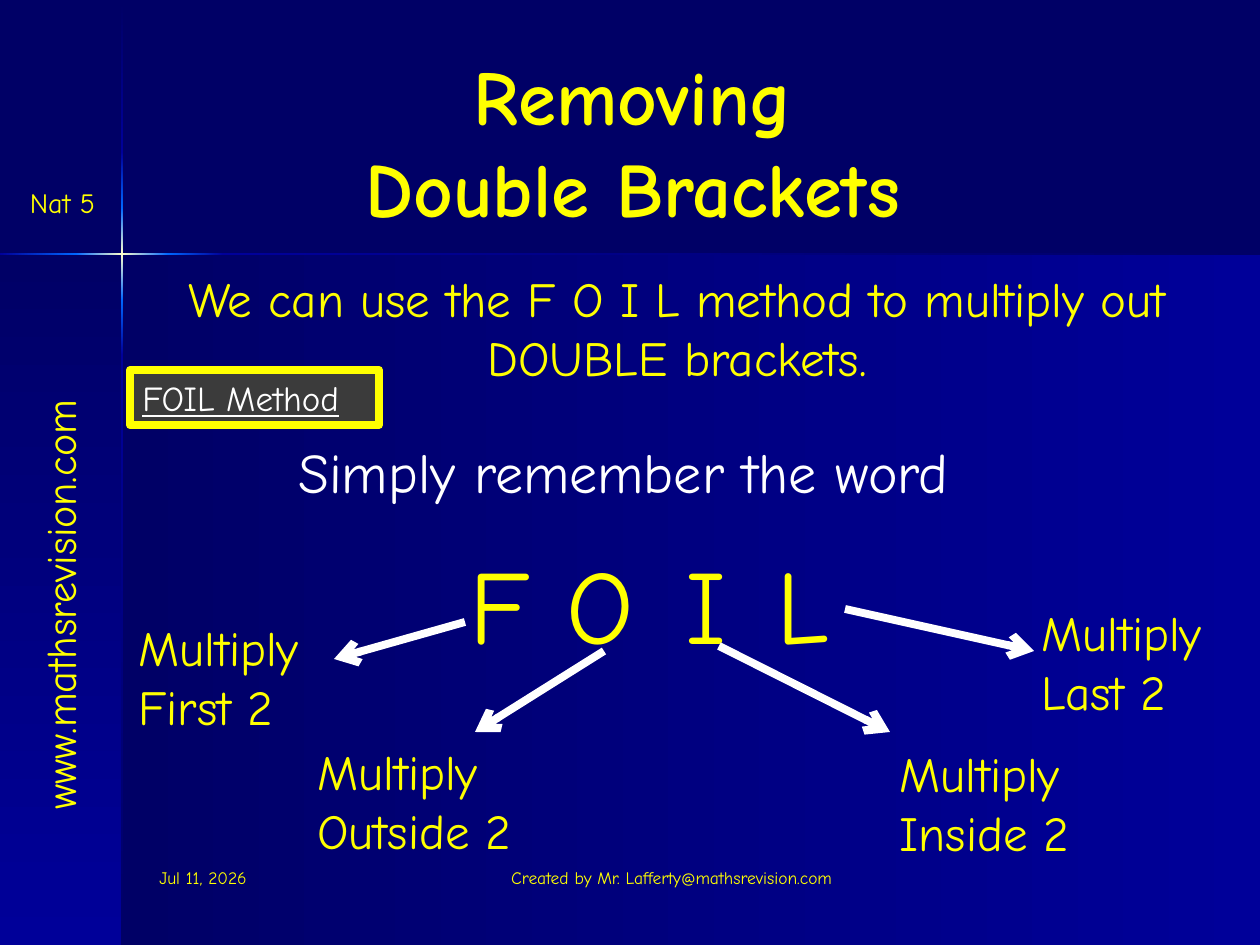
from lxml.etree import SubElement
from pptx import Presentation
from pptx.dml.color import RGBColor
from pptx.enum.shapes import MSO_CONNECTOR, MSO_SHAPE
from pptx.enum.text import MSO_ANCHOR, MSO_AUTO_SIZE, PP_ALIGN
from pptx.oxml.ns import qn
from pptx.util import Inches, Pt

SCALE = Inches(1) / 126
W, H = 1260, 945
FONT = "Comic Neue"
COLORS = {
    "navy": "000066", "blue": "000099", "glow": "0066FF", "cream": "FFFFCC",
    "yellow": "FFFF00", "white": "FFFFFF", "gray": "3B3B3B",
}


def px(n):
    return round(n * SCALE)


def rgb(name):
    return RGBColor.from_string(COLORS[name])


def write(sp, lines, size, color="yellow", align=PP_ALIGN.LEFT, wrap=False,
          grow=True, bold=None, underline=None):
    tf = sp.text_frame
    tf.word_wrap = wrap
    tf.auto_size = MSO_AUTO_SIZE.SHAPE_TO_FIT_TEXT if grow else MSO_AUTO_SIZE.NONE
    for i, line in enumerate(lines):
        p = tf.add_paragraph() if i else tf.paragraphs[0]
        p.alignment = align
        r = p.add_run()
        r.text = line
        r.font.name, r.font.size = FONT, Pt(size)
        r.font.bold, r.font.underline = bold, underline
        r.font.color.rgb = rgb(color)


def add_text(s, box, lines, size, **style):
    sp = s.shapes.add_textbox(*map(px, box))
    write(sp, lines, size, **style)
    return sp


def add_gradient(s, box, names, vertical):
    sp = s.shapes.add_shape(MSO_SHAPE.RECTANGLE, *map(px, box))
    sp.shadow.inherit = False
    sp.line.fill.background()
    sp.fill.gradient()
    sp.fill.gradient_angle = 270 if vertical else 0
    stops = sp._element.spPr.find(".//" + qn("a:gsLst"))
    for old in list(stops):
        stops.remove(old)
    for i, name in enumerate(names):
        gs = SubElement(stops, qn("a:gs"), pos=str(100000 * i // (len(names) - 1)))
        SubElement(gs, qn("a:srgbClr"), val=COLORS[name])


def add_arrow(s, x1, y1, x2, y2):
    line = s.shapes.add_connector(MSO_CONNECTOR.STRAIGHT, *map(px, (x1, y1, x2, y2)))
    line.line.color.rgb = rgb("white")
    line.line.width = Pt(4.5)
    SubElement(line.line._get_or_add_ln(), qn("a:tailEnd"), type="arrow")
    SubElement(line._element.spPr, qn("a:effectLst"))


def backdrop(s, box):
    x, y, w, h = box
    fill = s.background.fill
    fill.solid()
    fill.fore_color.rgb = rgb("navy")
    split_x, split_y = x + 122, y + 254
    add_gradient(s, (split_x, split_y, x + w - split_x, y + h - split_y),
                 ("navy", "blue"), False)
    add_gradient(s, (x, split_y, split_x - x, y + h - split_y), ("navy", "blue"), True)

    # Glowing cross: segments of the two beams
    rise, fall = ("blue", "glow"), ("glow", "blue")
    flare, fade = ("glow", "cream", "glow"), ("blue", "navy")
    for start, end, names in ((1, 152, fade[::-1]), (152, 208, rise), (208, 300, flare),
                              (300, 355, fall), (355, h, fade)):
        add_gradient(s, (split_x - 1, y + start, 2, end - start), names, True)
    for start, end, names in ((0, 76, rise), (76, 168, flare),
                              (168, 223, fall), (223, w, fade)):
        add_gradient(s, (x + start, split_y - 1, end - start, 2), names, False)


def sidebar(s, box):
    x, y, w, h = box
    site = add_text(s, (x - 180, y + 551, 479, 63), ["www.mathsrevision.com"], 24)
    site.rotation = 270
    add_text(s, (x + 13, y + 179, 99, 46), ["Nat 5"], 16, align=PP_ALIGN.CENTER)


def header(s, box):
    x, y, w, h = box
    title = add_text(s, (x, y, w, 198), ["Removing", "Double Brackets"], 44,
                     align=PP_ALIGN.CENTER, wrap=True, grow=False, bold=True)
    title.text_frame.vertical_anchor = MSO_ANCHOR.BOTTOM


def intro(s, box):
    x, y, w, h = box
    add_text(s, (x, y, w, 131),
             ["We can use the F O I L method to multiply out DOUBLE brackets."], 28,
             align=PP_ALIGN.CENTER, wrap=True)
    add_text(s, (x + 160, y + 169, 732, 81), ["Simply remember the word"], 32,
             color="white")

    # Method label
    sp = s.shapes.add_shape(MSO_SHAPE.RECTANGLE, *map(px, (x + 4, y + 108, 249, 55)))
    sp.shadow.inherit = False
    sp.fill.solid()
    sp.fill.fore_color.rgb = rgb("gray")
    sp.line.color.rgb = rgb("yellow")
    sp.line.width = Pt(4.5)
    write(sp, ["FOIL Method"], 20, color="white", underline=True)


def foil_diagram(s, box):
    x, y, w, h = box
    # Letter, its left and width; arrow ends; caption, its left, top and width
    parts = (
        ("F", 331, 88, (339, 89, 208, 126), "First 2", 0, 78, 223),
        ("O", 428, 108, (478, 118, 349, 199), "Outside 2", 179, 202, 249),
        ("I", 547, 82, (593, 113, 764, 199), "Inside 2", 761, 204, 223),
        ("L", 638, 83, (719, 76, 908, 118), "Last 2", 903, 63, 223),
    )
    for letter, left, width, (x1, y1, x2, y2), caption, cap_x, cap_y, cap_w in parts:
        add_text(s, (x + left, y, width, 139), [letter], 60)
        add_arrow(s, x + x1, y + y1, x + x2, y + y2)
        add_text(s, (x + cap_x, y + cap_y, cap_w, 131), ["Multiply", caption], 28)


def footer(s, box):
    x, y, w, h = box
    add_text(s, (x, y, 262, h), ["Jul 11, 2026"], 10, wrap=True, grow=False)
    add_text(s, (x + 325, y, 399, h), ["Created by Mr. Lafferty@mathsrevision.com"], 10,
             align=PP_ALIGN.CENTER, wrap=True, grow=False)


def main():
    prs = Presentation()
    prs.slide_width, prs.slide_height = px(W), px(H)
    s = prs.slides.add_slide(prs.slide_layouts[6])
    backdrop(s, (0, 0, W, H))
    sidebar(s, (0, 0, 122, H))
    header(s, (255, 41, 756, 198))
    intro(s, (126, 262, 1102, 250))
    foil_diagram(s, (126, 533, 1126, 335))
    footer(s, (147, 861, 724, 63))
    prs.save("out.pptx")


if __name__ == "__main__":
    main()
